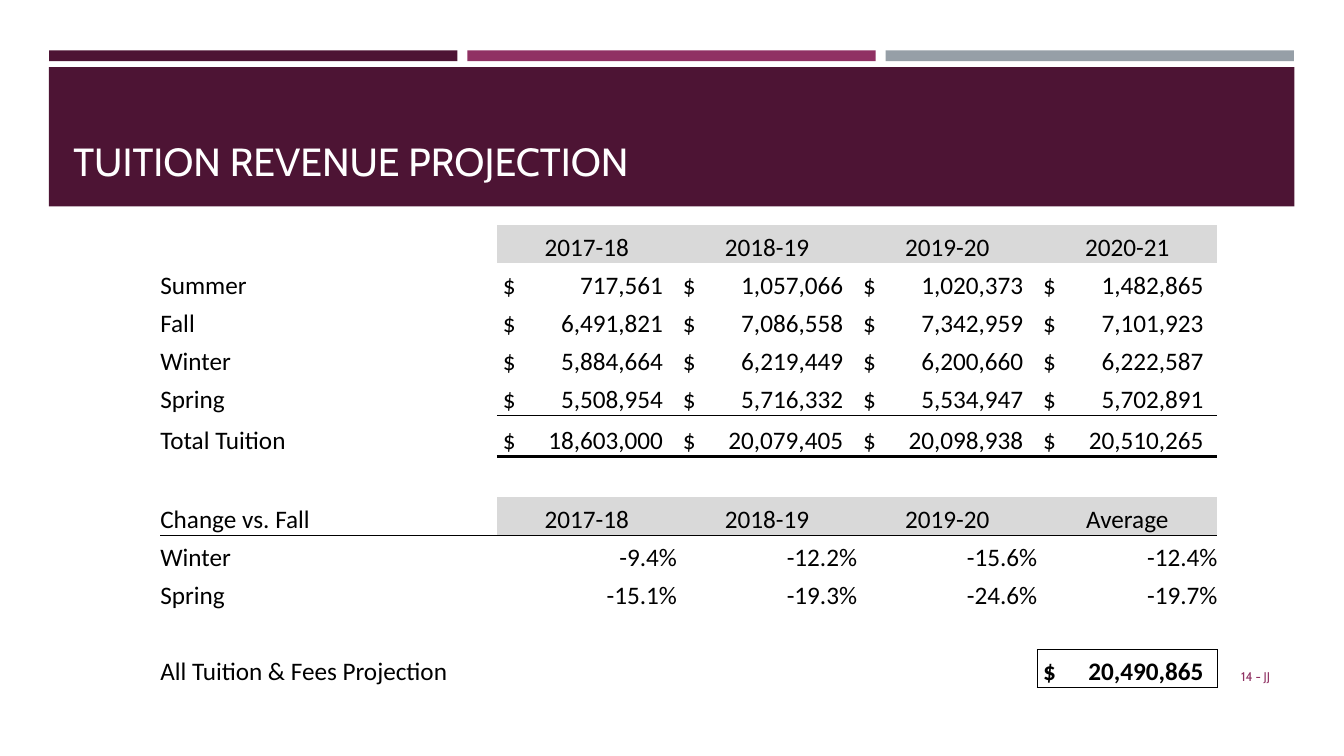
from dataclasses import dataclass

from lxml import etree
from pptx import Presentation
from pptx.dml.color import RGBColor
from pptx.enum.shapes import MSO_SHAPE
from pptx.enum.text import MSO_ANCHOR, PP_ALIGN
from pptx.oxml.ns import qn
from pptx.util import Cm, Pt

RECTANGLE = MSO_SHAPE.RECTANGLE
BOTTOM, MIDDLE = MSO_ANCHOR.BOTTOM, MSO_ANCHOR.MIDDLE
LEFT, CENTER, RIGHT = PP_ALIGN.LEFT, PP_ALIGN.CENTER, PP_ALIGN.RIGHT


@dataclass(frozen=True)
class Theme:
    plum: str = "4D1434"
    berry: str = "903163"
    slate: str = "969FA7"
    header: str = "D9D9D9"
    ink: str = "000000"
    white: str = "FFFFFF"
    heading_font: str = "Cabin"
    table_font: str = "Calibri"
    title_size: int = 28
    table_size: int = 18
    footer_size: int = 9


THEME = Theme()
MONEY_TAB = Cm(4.04)
MONEY_INSET = Cm(0.15)
LABEL_WIDTH, YEAR_WIDTH = Cm(8.48), Cm(4.54)
ROW_HEIGHT, TALL_ROW_HEIGHT = Cm(0.96), Cm(1.03)
TALL_ROWS = (5, 6)
TOTAL_ROW = 11

ROWS = [
    ("header", "", ["2017-18", "2018-19", "2019-20", "2020-21"]),
    ("money", "Summer", ["717,561", "1,057,066", "1,020,373", "1,482,865"]),
    ("money", "Fall", ["6,491,821", "7,086,558", "7,342,959", "7,101,923"]),
    ("money", "Winter", ["5,884,664", "6,219,449", "6,200,660", "6,222,587"]),
    ("money", "Spring", ["5,508,954", "5,716,332", "5,534,947", "5,702,891"]),
    ("money", "Total Tuition", ["18,603,000", "20,079,405", "20,098,938", "20,510,265"]),
    ("gap", "", [""] * 4),
    ("header", "Change vs. Fall", ["2017-18", "2018-19", "2019-20", "Average"]),
    ("percent", "Winter", ["-9.4%", "-12.2%", "-15.6%", "-12.4%"]),
    ("percent", "Spring", ["-15.1%", "-19.3%", "-24.6%", "-19.7%"]),
    ("gap", "", [""] * 4),
    ("money", "All Tuition & Fees Projection", ["", "", "", "20,490,865"]),
]
ALIGNMENTS = {"header": CENTER, "money": LEFT, "percent": RIGHT, "gap": LEFT}
RULES_BELOW = {
    4: (range(1, 5), 0.5),
    5: (range(1, 5), 2),
    7: (range(5), 0.5),
    10: (range(4, 5), 0.5),
    11: (range(4, 5), 0.5),
}


def add_bar(page, left, top, width, height, color):
    bar = page.shapes.add_shape(RECTANGLE, left, top, width, height)
    bar.shadow.inherit = False
    bar.fill.solid()
    bar.fill.fore_color.rgb = RGBColor.from_string(color)
    bar.line.fill.background()


def add_span(para, text, font, size, color, bold=False):
    span = para.add_run()
    span.text = text
    span.font.name = font
    span.font.size = Pt(size)
    span.font.bold = bold
    span.font.color.rgb = RGBColor.from_string(color)


def add_label(page, left, top, width, height, text, size, color, anchor, align):
    box = page.shapes.add_textbox(left, top, width, height)
    frame = box.text_frame
    frame.word_wrap = True
    frame.vertical_anchor = anchor
    para = frame.paragraphs[0]
    para.alignment = align
    add_span(para, text, THEME.heading_font, size, color)


def rule_weight(row, column):
    columns, weight = RULES_BELOW.get(row, ((), 0))
    return weight if column in columns else 0


def set_borders(cell, row, column):
    weights = {
        "a:lnL": 0.5 if (row, column) == (TOTAL_ROW, 4) else 0,
        "a:lnR": 0.5 if row == TOTAL_ROW and column >= 3 else 0,
        "a:lnT": rule_weight(row - 1, column),
        "a:lnB": rule_weight(row, column),
    }
    properties = cell._tc.get_or_add_tcPr()
    for tag, weight in weights.items():
        line = etree.SubElement(properties, qn(tag), w=str(Pt(weight)))
        if weight:
            fill = etree.SubElement(line, qn("a:solidFill"))
            etree.SubElement(fill, qn("a:srgbClr"), val=THEME.ink)
        else:
            etree.SubElement(line, qn("a:noFill"))


def add_money_tab(para):
    tabs = etree.SubElement(para._p.get_or_add_pPr(), qn("a:tabLst"))
    etree.SubElement(tabs, qn("a:tab"), pos=str(MONEY_TAB), algn="r")


def fill_cell(cell, row, column, kind, text):
    cell.margin_left = cell.margin_right = cell.margin_top = cell.margin_bottom = 0
    cell.vertical_anchor = BOTTOM
    set_borders(cell, row, column)
    if kind == "header" and column:
        cell.fill.solid()
        cell.fill.fore_color.rgb = RGBColor.from_string(THEME.header)
    else:
        cell.fill.background()
    para = cell.text_frame.paragraphs[0]
    para.alignment = ALIGNMENTS[kind] if column else LEFT
    para.font.size = Pt(THEME.table_size)
    if not text:
        return
    if kind == "money" and column:
        cell.margin_left = MONEY_INSET
        add_money_tab(para)
        text = "$\t" + text
    bold = row == TOTAL_ROW and column > 0
    add_span(para, text, THEME.table_font, THEME.table_size, THEME.ink, bold)


def add_projection_table(page):
    width = LABEL_WIDTH + 4 * YEAR_WIDTH
    frame = page.shapes.add_table(len(ROWS), 5, Cm(4.04), Cm(5.67), width, Cm(11.66))
    table = frame.table
    table.first_row = table.horz_banding = False
    for index, column in enumerate(table.columns):
        column.width = YEAR_WIDTH if index else LABEL_WIDTH
    for row, (kind, label, values) in enumerate(ROWS):
        table.rows[row].height = TALL_ROW_HEIGHT if row in TALL_ROWS else ROW_HEIGHT
        for column, text in enumerate([label, *values]):
            fill_cell(table.cell(row, column), row, column, kind, text)


def main():
    deck = Presentation()
    deck.slide_width, deck.slide_height = Cm(33.87), Cm(19.05)
    page = deck.slides.add_slide(deck.slide_layouts[6])
    for index, color in enumerate((THEME.plum, THEME.berry, THEME.slate)):
        add_bar(page, Cm(1.24) + index * Cm(10.54), Cm(1.27), Cm(10.29), Cm(0.27), color)
    add_bar(page, Cm(1.23), Cm(1.69), Cm(31.39), Cm(3.51), THEME.plum)
    add_label(page, Cm(1.6), Cm(2.03), Cm(30.63), Cm(2.74), "TUITION REVENUE PROJECTION",
              THEME.title_size, THEME.white, BOTTOM, LEFT)
    add_label(page, Cm(29.34), Cm(16.54), Cm(2.92), Cm(1.02), "14 - JJ",
              THEME.footer_size, THEME.berry, MIDDLE, RIGHT)
    add_projection_table(page)
    deck.save("out.pptx")


if __name__ == "__main__":
    main()
